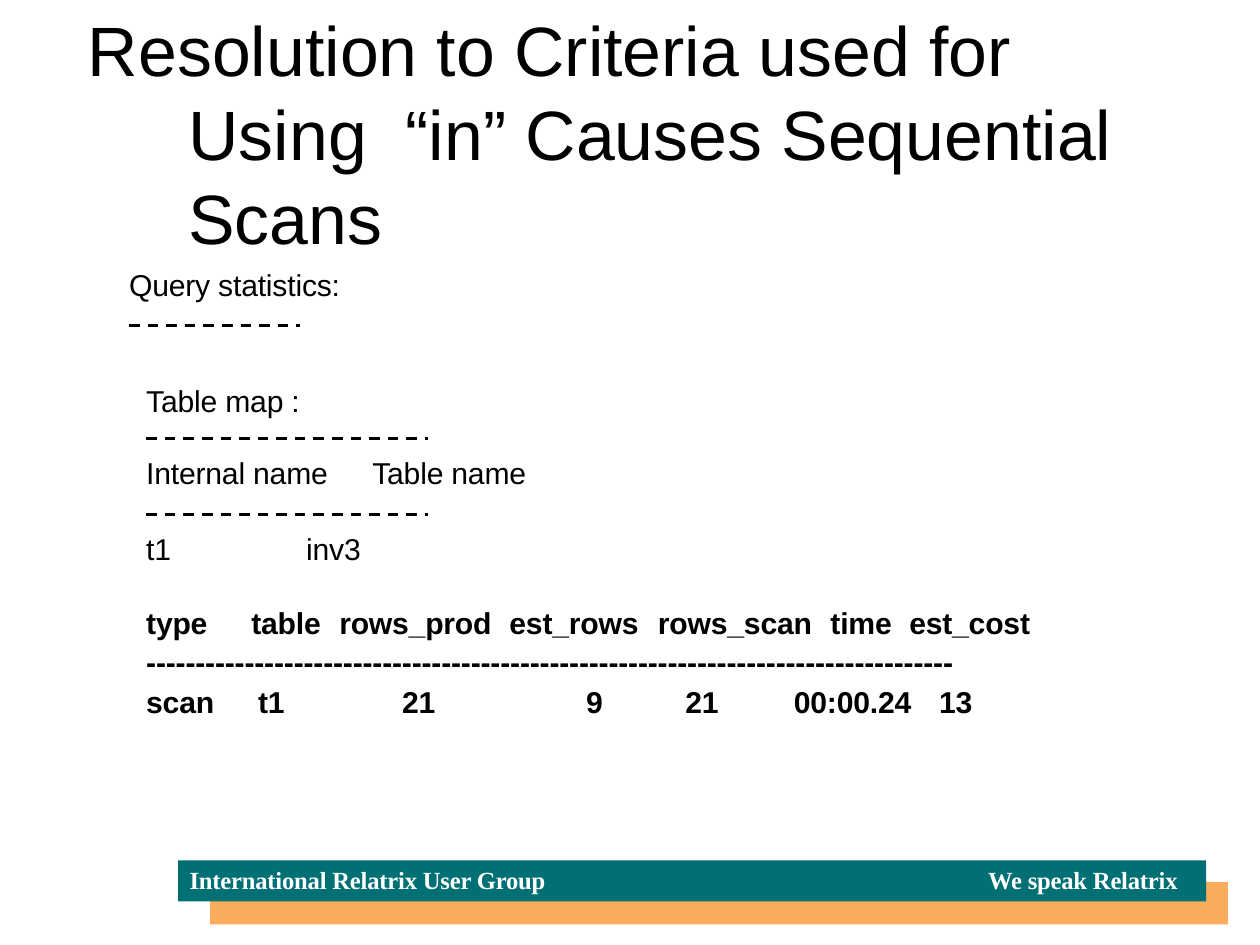
from lxml import etree
from pptx import Presentation
from pptx.dml.color import RGBColor
from pptx.enum.dml import MSO_LINE
from pptx.enum.shapes import MSO_CONNECTOR, MSO_SHAPE
from pptx.enum.text import MSO_ANCHOR, PP_ALIGN
from pptx.oxml.ns import qn
from pptx.util import Inches, Pt

BLACK = RGBColor(0x00, 0x00, 0x00)
WHITE = RGBColor(0xFF, 0xFF, 0xFF)
ORANGE = RGBColor(0xF9, 0xAC, 0x5B)
TEAL = RGBColor(0x00, 0x70, 0x75)

HEADER_TABS = (0.92, 1.69, 3.18, 4.48, 5.99, 6.68)
VALUE_TABS = (0.98, 2.24, 3.85, 4.72, 5.67, 6.94)


def set_frame(frame):
    frame.margin_left = frame.margin_right = frame.margin_bottom = 0
    frame.margin_top = Inches(0.01)
    frame.vertical_anchor = MSO_ANCHOR.TOP
    frame.word_wrap = True


def set_font(paragraph, size, color=BLACK, bold=False, name="Arial"):
    font = paragraph.font
    font.name = name
    font.size = Pt(size)
    font.bold = bold
    font.color.rgb = color


def set_indent(paragraph, margin, first_line=0):
    properties = paragraph._p.get_or_add_pPr()
    properties.set("marL", str(Inches(margin)))
    if first_line:
        properties.set("indent", str(Inches(first_line)))


def add_tabs(paragraph, positions):
    properties = paragraph._p.get_or_add_pPr()
    tab_list = etree.SubElement(properties, qn("a:tabLst"))
    for position in positions:
        etree.SubElement(tab_list, qn("a:tab"), pos=str(Inches(position)), algn="l")


def tighten(paragraph):
    for run in paragraph.runs:
        run._r.get_or_add_rPr().set("spc", "-10")


def add_text(slide, left, top, width, height, lines, size=19, **font):
    frame = slide.shapes.add_textbox(
        Inches(left), Inches(top), Inches(width), Inches(height)).text_frame
    set_frame(frame)
    for index, (text, space_before, margin, tabs) in enumerate(lines):
        paragraph = frame.add_paragraph() if index else frame.paragraphs[0]
        paragraph.text = text
        set_indent(paragraph, margin)
        paragraph.space_before = Pt(space_before)
        if tabs:
            add_tabs(paragraph, tabs)
        set_font(paragraph, size, **font)
        tighten(paragraph)


def add_bar(slide, left, top, width, height, color):
    shape = slide.shapes.add_shape(
        MSO_SHAPE.RECTANGLE, Inches(left), Inches(top), Inches(width), Inches(height))
    shape.shadow.inherit = False
    shape.fill.solid()
    shape.fill.fore_color.rgb = color
    shape.line.fill.background()


def add_dashed_rule(slide, left, top, width):
    rule = slide.shapes.add_connector(
        MSO_CONNECTOR.STRAIGHT, Inches(left), Inches(top), Inches(left + width), Inches(top))
    rule.line.color.rgb = BLACK
    rule.line.width = Pt(1.67)
    rule.line.dash_style = MSO_LINE.DASH
    etree.SubElement(rule._element.spPr, qn("a:effectLst"))


def format_title(slide):
    title = slide.shapes.title
    title.left, title.top = Inches(0.75), Inches(0.05)
    title.width, title.height = Inches(9.85), Inches(2.2)
    set_frame(title.text_frame)
    paragraph = title.text_frame.paragraphs[0]
    paragraph.text = "Resolution to Criteria used for\vUsing  “in” Causes Sequential Scans"
    paragraph.alignment = PP_ALIGN.LEFT
    paragraph.line_spacing = 1.0
    set_indent(paragraph, 0.9, -0.88)
    set_font(paragraph, 44)


def add_footer(slide):
    add_bar(slide, 1.84, 7.72, 8.91, 0.37, ORANGE)
    add_bar(slide, 1.56, 7.53, 9, 0.36, TEAL)
    for left, width, text in ((1.65, 3.5, "International Relatrix User Group"),
                              (8.64, 1.9, "We speak Relatrix")):
        add_text(slide, left, 7.56, width, 0.27, [(text, 0, 0.01, ())],
                 size=15.5, color=WHITE, bold=True, name="Times New Roman")


def main():
    presentation = Presentation()
    presentation.slide_width = Inches(11.03)
    presentation.slide_height = Inches(8.27)
    slide = presentation.slides.add_slide(presentation.slide_layouts[5])

    format_title(slide)
    add_text(slide, 1.12, 2.32, 1.95, 1.33, [
        ("Query statistics:", 0, 0.01, ()),
        ("Table map :", 50.2, 0.16, ()),
    ])
    add_text(slide, 1.27, 3.97, 1.9, 1, [
        ("Internal name", 0, 0.01, ()),
        ("t1\tinv3", 25, 0.01, (1.4,)),
    ])
    add_text(slide, 3.25, 3.97, 1.5, 0.34, [("Table name", 0, 0.01, ())])
    for left, top, width in ((1.13, 2.85, 1.5), (1.28, 3.84, 2.47), (1.28, 4.5, 2.47)):
        add_dashed_rule(slide, left, top, width)
    add_text(slide, 1.27, 5.28, 7.95, 1, [
        ("type\ttable\trows_prod\test_rows\trows_scan\ttime\test_cost", 0, 0.01, HEADER_TABS),
        ("-" * 82, 2, 0.01, ()),
        ("scan\tt1\t21\t9\t21\t00:00.24\t13", 2, 0.01, VALUE_TABS),
    ], bold=True)
    add_footer(slide)

    presentation.save("out.pptx")


if __name__ == "__main__":
    main()
